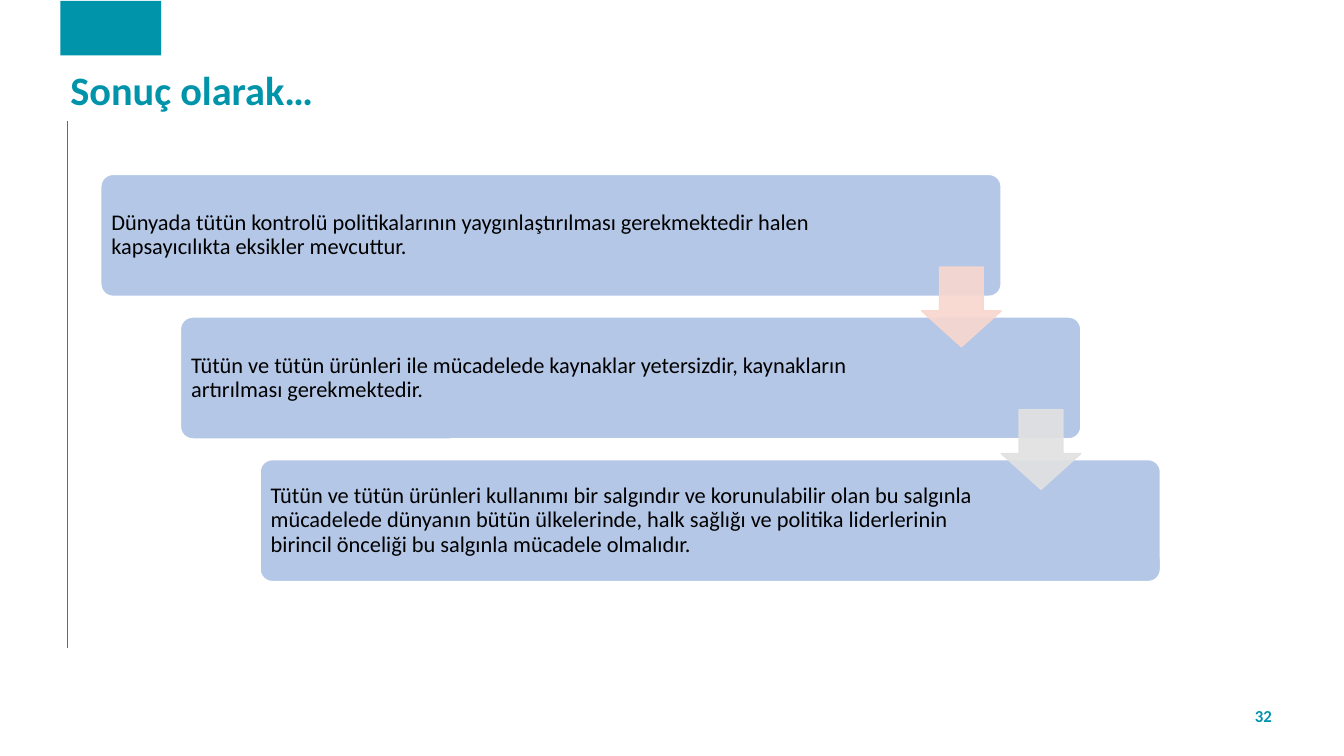
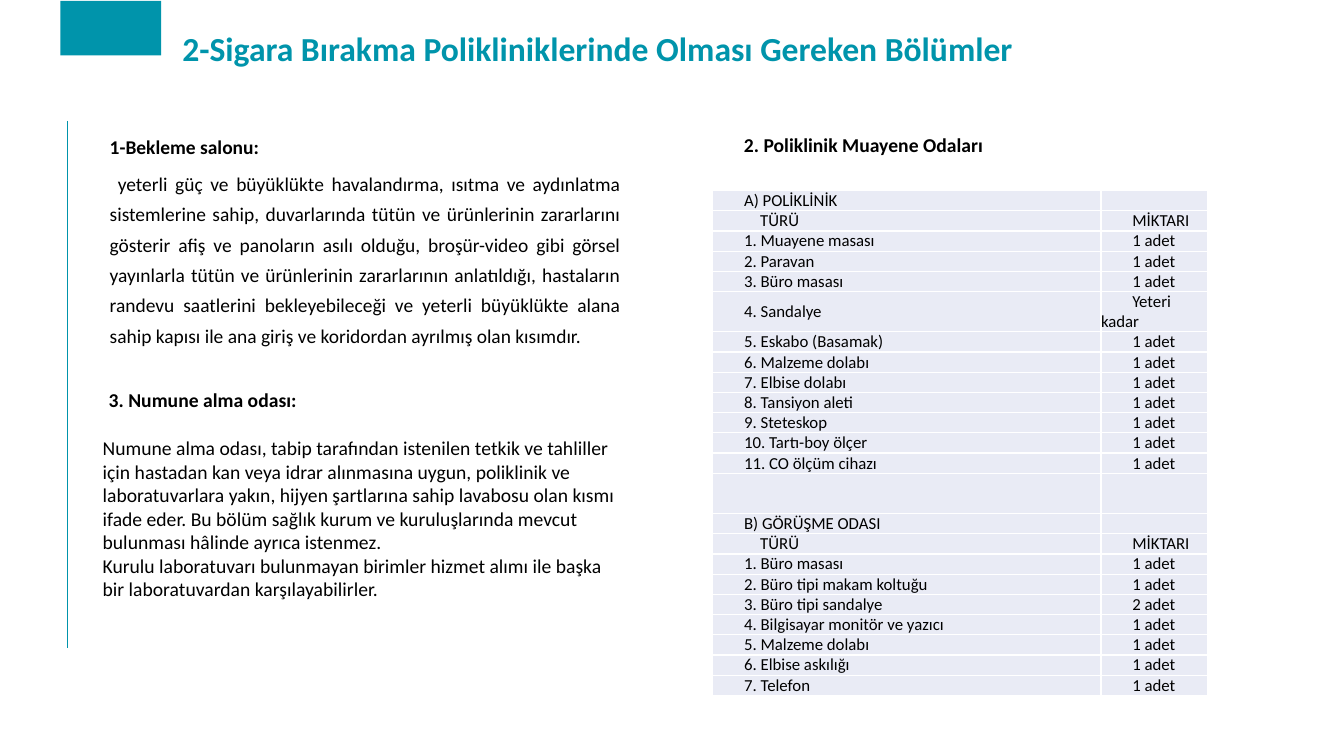
from lxml.etree import SubElement
from pptx import Presentation
from pptx.dml.color import RGBColor
from pptx.enum.shapes import MSO_CONNECTOR, MSO_SHAPE
from pptx.enum.text import MSO_ANCHOR, PP_ALIGN
from pptx.oxml.ns import qn
from pptx.util import Inches, Pt

FONT = "Calibri"
TEAL = RGBColor(0x00, 0x94, 0xAB)
BLACK = RGBColor(0x00, 0x00, 0x00)
WHITE = RGBColor(0xFF, 0xFF, 0xFF)
CARD = RGBColor(0xB4, 0xC7, 0xE7)
PEACH = RGBColor(0xF8, 0xD7, 0xCE)
GREY = RGBColor(0xE1, 0xE1, 0xE1)
CELL = RGBColor(0xE9, 0xEB, 0xF5)

CONCLUSIONS = [
    ("Dünyada tütün kontrolü politikalarının yaygınlaştırılması gerekmektedir halen "
     "kapsayıcılıkta eksikler mevcuttur.", 1.31),
    ("Tütün ve tütün ürünleri ile mücadelede kaynaklar yetersizdir, kaynakların "
     "artırılması gerekmektedir.", 1.65),
    ("Tütün ve tütün ürünleri kullanımı bir salgındır ve korunulabilir olan bu salgınla "
     "mücadelede dünyanın bütün ülkelerinde, halk sağlığı ve politika liderlerinin "
     "birincil önceliği bu salgınla mücadele olmalıdır.", 1.65),
]
WAITING_ROOM = (
    "yeterli güç ve büyüklükte havalandırma, ısıtma ve aydınlatma sistemlerine sahip, "
    "duvarlarında tütün ve ürünlerinin zararlarını gösterir afiş ve panoların asılı olduğu, "
    "broşür-video gibi görsel yayınlarla tütün ve ürünlerinin zararlarının anlatıldığı, "
    "hastaların randevu saatlerini bekleyebileceği ve yeterli büyüklükte alana sahip kapısı "
    "ile ana giriş ve koridordan ayrılmış olan kısımdır.")
SAMPLE_ROOM = (
    "Numune alma odası, tabip tarafından istenilen tetkik ve tahliller için hastadan kan veya "
    "idrar alınmasına uygun, poliklinik ve laboratuvarlara yakın, hijyen şartlarına sahip "
    "lavabosu olan kısmı ifade eder. Bu bölüm sağlık kurum ve kuruluşlarında mevcut bulunması "
    "hâlinde ayrıca istenmez.")
SAMPLE_SERVICE = ("Kurulu laboratuvarı bulunmayan birimler hizmet alımı ile başka bir "
                  "laboratuvardan karşılayabilirler.")
ONE = "1 adet"
EQUIPMENT = [
    ("A) POLİKLİNİK", ""),
    ("TÜRÜ", "MİKTARI"),
    ("1. Muayene masası", ONE),
    ("2. Paravan", ONE),
    ("3. Büro masası", ONE),
    ("4. Sandalye", "Yeteri kadar"),
    ("5. Eskabo (Basamak)", ONE),
    ("6. Malzeme dolabı", ONE),
    ("7. Elbise dolabı", ONE),
    ("8. Tansiyon aleti", ONE),
    ("9. Steteskop", ONE),
    ("10. Tartı-boy ölçer", ONE),
    ("11. CO ölçüm cihazı", ONE),
    ("", ""),
    ("B) GÖRÜŞME ODASI", ""),
    ("TÜRÜ", "MİKTARI"),
    ("1. Büro masası", ONE),
    ("2. Büro tipi makam koltuğu", ONE),
    ("3. Büro tipi sandalye", "2 adet"),
    ("4. Bilgisayar monitör ve yazıcı", ONE),
    ("5. Malzeme dolabı", ONE),
    ("6. Elbise askılığı", ONE),
    ("7. Telefon", ONE),
]


def write(p, text, size, color=BLACK, bold=False, spacing=None, before=0,
          align=PP_ALIGN.LEFT, margin=0, indent=0):
    """Write one run into a paragraph and set its layout."""
    p.alignment = align
    p.line_spacing = spacing
    p.space_before = Pt(before)
    pPr = p._p.get_or_add_pPr()
    pPr.set("marL", str(Inches(margin)))
    pPr.set("indent", str(Inches(indent)))
    r = p.add_run()
    r.text = text
    r.font.name, r.font.size, r.font.bold = FONT, Pt(size), bold
    r.font.color.rgb = color


def add_text(s, box, paragraphs, anchor=MSO_ANCHOR.TOP):
    """Add a wrapped text box holding (text, options) paragraphs."""
    tf = s.shapes.add_textbox(*map(Inches, box)).text_frame
    tf.word_wrap = True
    tf.vertical_anchor = anchor
    for i, (text, options) in enumerate(paragraphs):
        write(tf.add_paragraph() if i else tf.paragraphs[0], text, **options)


def add_block(s, kind, box, fill, line=None):
    """Add a filled preset shape without shadow."""
    sp = s.shapes.add_shape(kind, *map(Inches, box))
    sp.shadow.inherit = False
    sp.fill.solid()
    sp.fill.fore_color.rgb = fill
    if line is None:
        sp.line.fill.background()
    else:
        sp.line.color.rgb = line
        sp.line.width = Pt(1)
    return sp


def add_base(prs, title, left, top, size):
    """Add a slide with the side rule, the corner band and the title."""
    s = prs.slides.add_slide(prs.slide_layouts[6])
    rule = s.shapes.add_connector(MSO_CONNECTOR.STRAIGHT, Inches(0.67), Inches(1.2),
                                  Inches(0.67), Inches(6.43))
    rule.line.color.rgb = TEAL
    rule.line.width = Pt(1)
    SubElement(rule._element.spPr, qn("a:effectLst"))
    add_block(s, MSO_SHAPE.RECTANGLE, (0.6, 0.01, 1, 0.54), TEAL)
    add_text(s, (left, top, 11, 0.55),
             [(title, dict(size=size, color=TEAL, bold=True, spacing=0.9))], MSO_ANCHOR.MIDDLE)
    return s


def add_cascade(s, left, top, width, height):
    """Step the conclusion cards down the box and link them with arrows."""
    card_w, card_h, arrow = 8.93, 1.21, 0.79
    steps = len(CONCLUSIONS) - 1
    dx, dy = (width - card_w) / steps, (height - card_h) / steps
    for i, (text, right_inset) in enumerate(CONCLUSIONS):
        card = add_block(s, MSO_SHAPE.ROUNDED_RECTANGLE,
                         (left + i * dx, top + i * dy, card_w, card_h), CARD, WHITE)
        card.adjustments[0] = 0.1
        tf = card.text_frame
        tf.word_wrap = True
        tf.vertical_anchor = MSO_ANCHOR.MIDDLE
        tf.margin_left = tf.margin_top = tf.margin_bottom = Inches(0.07)
        tf.margin_right = Inches(right_inset)
        write(tf.paragraphs[0], text, 16, spacing=0.9)
    for i, color in enumerate((PEACH, GREY)):
        sp = add_block(s, MSO_SHAPE.DOWN_ARROW,
                       (left + card_w - arrow + i * dx, top + 0.92 + i * dy, arrow, arrow),
                       color, color)
        sp.adjustments[0], sp.adjustments[1] = 0.55, 0.45
        for clr in sp._element.spPr.iter(qn("a:srgbClr")):
            SubElement(clr, qn("a:alpha"), val="90000")


def fill_cell(cell, text, indent):
    """Give a cell white borders, a flat fill and its text."""
    tcPr = cell._tc.get_or_add_tcPr()
    for side in ("lnL", "lnR", "lnT", "lnB"):
        ln = SubElement(tcPr, qn(f"a:{side}"), w=str(Pt(1)))
        SubElement(SubElement(ln, qn("a:solidFill")), qn("a:srgbClr"), val=str(WHITE))
    cell.fill.solid()
    cell.fill.fore_color.rgb = CELL
    cell.vertical_anchor = MSO_ANCHOR.MIDDLE
    cell.margin_left = cell.margin_right = cell.margin_top = cell.margin_bottom = 0
    p = cell.text_frame.paragraphs[0]
    if text:
        write(p, text, 12, indent=indent)
    else:
        SubElement(p._p, qn("a:endParaRPr"), sz="1200")


def add_equipment(s, left, top, widths, row_h):
    """Add the equipment table."""
    tbl = s.shapes.add_table(len(EQUIPMENT), len(widths), Inches(left), Inches(top),
                             Inches(sum(widths)), Inches(row_h * len(EQUIPMENT))).table
    tbl.first_row = tbl.horz_banding = False
    for col, width in zip(tbl.columns, widths):
        col.width = Inches(width)
    for i, row in enumerate(EQUIPMENT):
        double = row[1] == "Yeteri kadar" or not any(row)
        tbl.rows[i].height = Inches(row_h * (2 if double else 1))
        for j, text in enumerate(row):
            fill_cell(tbl.cell(i, j), text, 0.47 if text == "TÜRÜ" else 0.31)


def add_conclusion_slide(prs):
    """Build the conclusion slide."""
    s = add_base(prs, "Sonuç olarak…", 0.6, 0.64, 28.8)
    add_text(s, (12.33, 6.7, 0.4, 0.8),
             [("32", dict(size=12, color=TEAL, bold=True, align=PP_ALIGN.CENTER))],
             MSO_ANCHOR.MIDDLE)
    add_cascade(s, 1, 1.73, 10.51, 4.04)


def add_sections_slide(prs):
    """Build the slide on the sections of a clinic."""
    s = add_base(prs, "2-Sigara Bırakma Polikliniklerinde Olması Gereken Bölümler",
                 1.71, 0.23, 24)
    body = dict(size=13.9, spacing=1.3, align=PP_ALIGN.JUSTIFY, margin=0.5)
    add_text(s, (0.49, 1.22, 5.77, 2.33), [
        ("1-Bekleme salonu:", dict(body, bold=True)),
        (WAITING_ROOM, dict(body, before=5, indent=0.08)),
    ])
    add_text(s, (6.78, 1.2, 5.51, 0.71),
             [("2. Poliklinik Muayene Odaları", dict(body, size=14, bold=True))])
    add_equipment(s, 7.07, 1.89, (3.85, 1.06), 0.2)
    add_text(s, (0.92, 3.8, 5.34, 2.24), [
        ("3. Numune alma odası:", dict(size=14, bold=True, indent=0.06)),
        (SAMPLE_ROOM, dict(size=14, before=17.5)),
        (SAMPLE_SERVICE, dict(size=14)),
    ])


def main():
    """Build and save the presentation."""
    prs = Presentation()
    prs.slide_width, prs.slide_height = Inches(13.33), Inches(7.5)
    add_conclusion_slide(prs)
    add_sections_slide(prs)
    prs.save("out.pptx")


if __name__ == "__main__":
    main()
